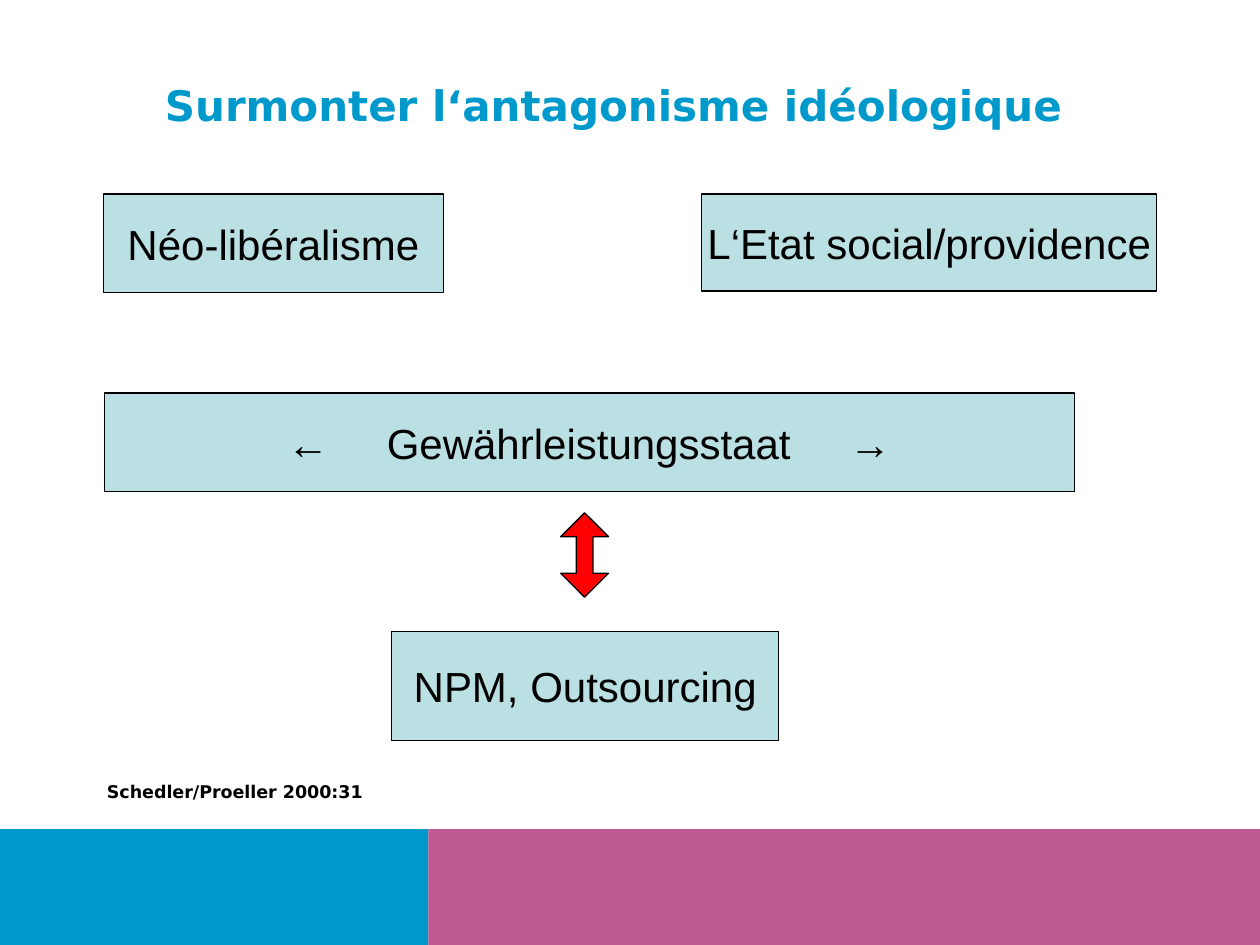
from lxml.etree import SubElement
from pptx import Presentation
from pptx.dml.color import RGBColor
from pptx.enum.shapes import MSO_SHAPE
from pptx.enum.text import MSO_ANCHOR, PP_ALIGN
from pptx.oxml.ns import qn
from pptx.util import Inches, Pt

COLORS = {
    "blue": "0099CC",
    "pink": "BE5993",
    "pale": "BBE0E3",
    "red": "FF0000",
    "black": "000000",
}


def color(name):
    """Return the named colour."""
    return RGBColor.from_string(COLORS[name])


def add_block(page, kind, place, fill, outlined=True):
    """Add a filled preset shape, with a thin black outline if wanted."""
    block = page.shapes.add_shape(kind, *map(Inches, place))
    block.shadow.inherit = False
    block.fill.solid()
    block.fill.fore_color.rgb = color(fill)
    if outlined:
        block.line.color.rgb = color("black")
        block.line.width = Pt(0.75)
    else:
        block.line.fill.background()
    return block


def add_tab_stops(para, stops):
    """Add left tab stops at the given distances in inches."""
    tabs = SubElement(para._p.get_or_add_pPr(), qn("a:tabLst"))
    for stop in stops:
        SubElement(tabs, qn("a:tab"), pos=str(Inches(stop)), algn="l")


def write(shape, text, size, font, ink="black", bold=False,
          align=PP_ALIGN.CENTER, anchor=MSO_ANCHOR.MIDDLE, wrap=True):
    """Write one run of text into a shape and return its paragraph."""
    frame = shape.text_frame
    frame.word_wrap = wrap
    frame.vertical_anchor = anchor
    para = frame.paragraphs[0]
    para.alignment = align
    span = para.add_run()
    span.text = text
    span.font.size = Pt(size)
    span.font.name = font
    span.font.bold = bold
    span.font.color.rgb = color(ink)
    return para


def add_concept(page, place, text):
    """Add a pale box with a centred label."""
    box = add_block(page, MSO_SHAPE.RECTANGLE, place, "pale")
    write(box, text, 24, "Arial", wrap=False)


def add_spectrum(page, place, text, inset, stops):
    """Add a pale box whose label parts are spread by tab stops."""
    box = add_block(page, MSO_SHAPE.RECTANGLE, place, "pale")
    box.text_frame.margin_left = Inches(inset)
    para = write(box, text, 24, "Arial", align=PP_ALIGN.LEFT)
    add_tab_stops(para, stops)


def add_bands(page):
    """Add the coloured bands at the foot of the page."""
    for place, fill in (
        ((0, 6.58, 3.4, 0.92), "blue"),
        ((3.4, 6.58, 6.6, 0.92), "pink"),
        ((0.42, 6.58, 2.42, 0.58), "blue"),
    ):
        add_block(page, MSO_SHAPE.RECTANGLE, place, fill, outlined=False)


def add_label(page, place, text, size, **style):
    """Add a bold text box."""
    box = page.shapes.add_textbox(*map(Inches, place))
    write(box, text, size, "DejaVu Sans", bold=True, **style)


def main():
    """Build the slide and save it."""
    deck = Presentation()
    deck.slide_width, deck.slide_height = Inches(10), Inches(7.5)
    page = deck.slides.add_slide(deck.slide_layouts[6])

    add_bands(page)
    add_label(page, (0.37, 0.32, 9, 1.02),
              "Surmonter l‘antagonisme idéologique", 24, ink="blue")
    add_concept(page, (0.82, 1.54, 2.7, 0.78), "Néo-libéralisme")
    add_concept(page, (5.57, 1.54, 3.61, 0.77), "L‘Etat social/providence")
    add_spectrum(page, (0.83, 3.12, 7.7, 0.78),
                 "←\tGewährleistungsstaat\t→", 1.45, (0.79, 4.46))
    add_concept(page, (3.11, 5.01, 3.07, 0.87), "NPM, Outsourcing")
    arrow = add_block(page, MSO_SHAPE.UP_DOWN_ARROW,
                      (4.45, 4.07, 0.38, 0.67), "red")
    arrow.adjustments[0] = 0.5
    arrow.adjustments[1] = 0.35
    add_label(page, (0.75, 6.15, 2.68, 0.27), "Schedler/Proeller 2000:31", 10,
              align=PP_ALIGN.LEFT, anchor=MSO_ANCHOR.TOP)

    deck.save("out.pptx")


if __name__ == "__main__":
    main()
